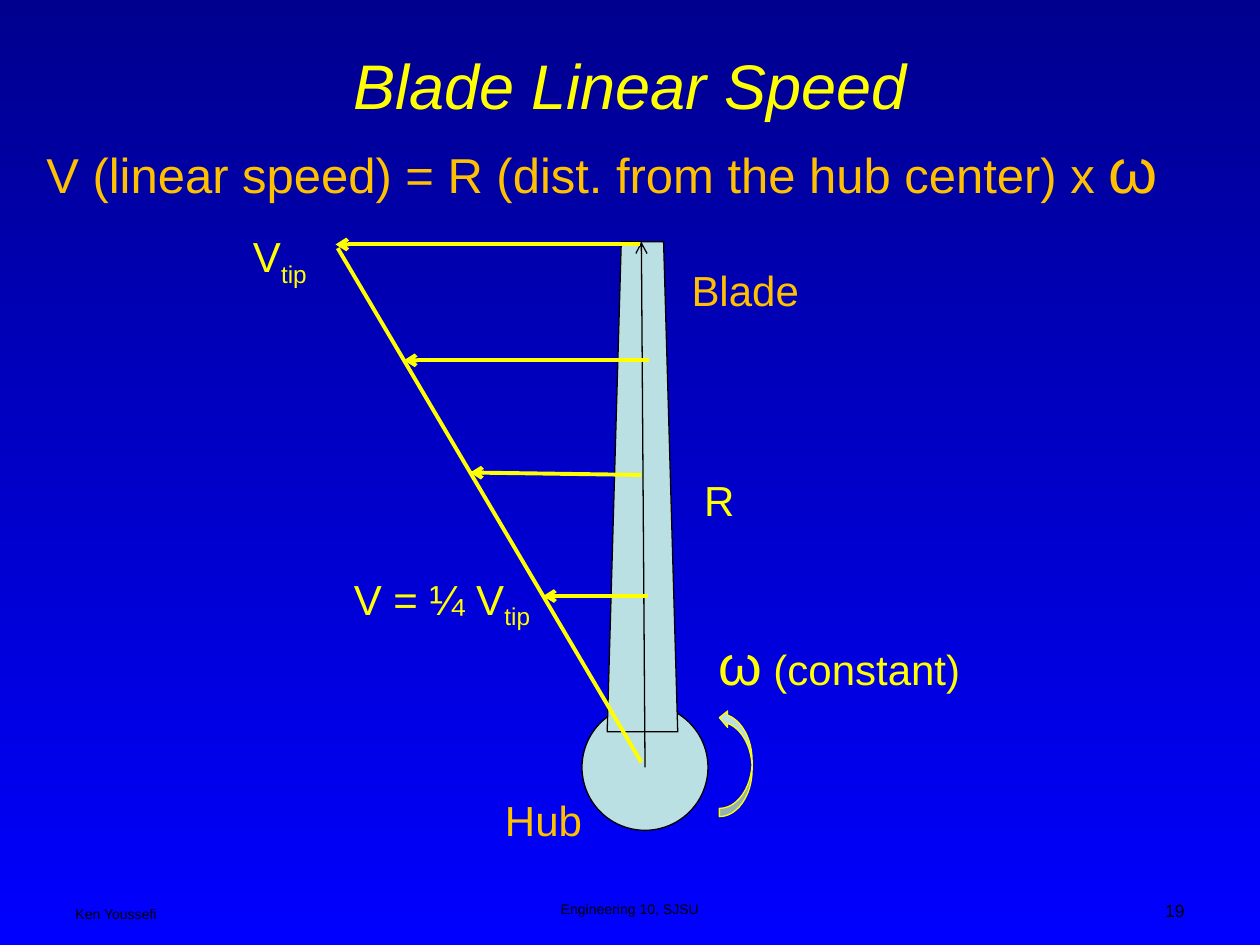
import pptx
import pptx.util
import pptx.dml.color
import pptx.enum.shapes
import pptx.enum.text
import pptx.oxml.ns
from lxml import etree

Pt = pptx.util.Pt
PRESET = pptx.enum.shapes.MSO_SHAPE
ALIGN = pptx.enum.text.PP_ALIGN
FIT = pptx.enum.text.MSO_AUTO_SIZE
qn = pptx.oxml.ns.qn

COLORS = {
    "sky top": "00008F",
    "sky bottom": "0000FF",
    "yellow": "FFFF00",
    "orange": "FFC000",
    "metal": "BBE0E3",
    "black": "000000",
}


def color(name):
    return pptx.dml.color.RGBColor.from_string(COLORS[name])


def style_font(font, size, color_name):
    font.name = "Arial"
    font.size = Pt(size)
    font.color.rgb = color(color_name)


def add_label(shapes, box, runs, size, color_name, wrap=True, align=None, fit=FIT.SHAPE_TO_FIT_TEXT):
    """Add a one-paragraph label; each run is (text, own size or None, is subscript)."""
    label = shapes.add_textbox(*map(Pt, box))
    frame = label.text_frame
    frame.word_wrap = wrap
    frame.auto_size = fit
    paragraph = frame.paragraphs[0]
    paragraph.alignment = align
    style_font(paragraph.font, size, color_name)
    for text, own_size, subscript in runs:
        run = paragraph.add_run()
        run.text = text
        if own_size:
            run.font.size = Pt(own_size)
        if subscript:
            run._r.get_or_add_rPr().set("baseline", "-25000")


def add_part(shapes, preset, box, outline):
    part = shapes.add_shape(preset, *map(Pt, box))
    part.shadow.inherit = False
    part.fill.solid()
    part.fill.fore_color.rgb = color("metal")
    part.line.color.rgb = color(outline)
    part.line.width = Pt(0.75)
    return part


def add_line(shapes, start, end, color_name, width, arrow=True):
    line = shapes.add_connector(
        pptx.enum.shapes.MSO_CONNECTOR.STRAIGHT, *map(Pt, (*start, *end)))
    line.line.color.rgb = color(color_name)
    line.line.width = Pt(width)
    if arrow:
        etree.SubElement(line.line._get_or_add_ln(), qn("a:tailEnd"), type="arrow")
    etree.SubElement(line._element.spPr, qn("a:effectLst"))


def paint_background(slide):
    fill = slide.background.fill
    fill.gradient()
    fill.gradient_angle = 270
    for stop, name in zip(fill.gradient_stops, ("sky top", "sky bottom")):
        stop.color.rgb = color(name)


def build_header(slide, left, top, width):
    # Title
    title = slide.shapes.title
    title.left, title.top, title.width, title.height = map(Pt, (left, top, width, 52.6))
    title.text_frame.text = "Blade Linear Speed"
    title.text_frame.auto_size = FIT.NONE
    title.text_frame.vertical_anchor = pptx.enum.text.MSO_ANCHOR.MIDDLE
    heading = title.text_frame.paragraphs[0]
    heading.alignment = ALIGN.CENTER
    style_font(heading.font, 36, "yellow")
    heading.font.italic = True

    # Speed formula
    add_label(slide.shapes, (left - 16.6, top + 49.7, 673.2, 51),
              [("V (linear speed) = R (dist. from the hub center) x ", None, False),
               ("ω", 36, False)], 28, "orange")


def build_diagram(slide, left, top):
    shapes = slide.shapes

    def at(x, y, *size):
        return (left + x, top + y, *size)

    # Hub, rotation and blade; the rotation label stays on one line above its arrow
    add_part(shapes, PRESET.OVAL, at(195.6, 274.5, 72, 72), "black")
    rotation = add_part(shapes, PRESET.CURVED_RIGHT_ARROW, at(274.1, 277.4, 18.7, 61.2), "yellow")
    rotation.rotation = 180
    for index, value in enumerate((0.25, 0.5, 0.25)):
        rotation.adjustments[index] = value
    add_label(shapes, at(266.2, 228.4, 156, 46),
              [("ω", 32, False), (" (constant)", None, False)], 24, "yellow", wrap=False)
    blade = add_part(shapes, PRESET.FLOWCHART_MANUAL_OPERATION, at(210, 10.2, 40.3, 280), "black")
    blade._element.spPr.get_or_add_xfrm().set("flipV", "1")

    # Radius, measured from the hub center
    add_label(shapes, at(258.3, 139.8, 32.4, 36.7), [("R", None, False)], 24, "yellow", wrap=False)
    add_line(shapes, at(231.6, 310.5), at(229.5, 10.2), "black", 0.75)

    # Linear speed profile
    center_x, center_y = 229.5, 307.6
    tip_x, tip_y = 56, 13.8
    add_line(shapes, at(center_x, center_y), at(tip_x, tip_y), "yellow", 2.25, arrow=False)
    add_label(shapes, at(0.5, 0.2, 47.5, 36),
              [("V", None, False), ("tip", None, True)], 24, "yellow", wrap=False)

    # Speed arrows, each reaching the profile
    def add_speed(target, start_x, start_y, end_y):
        end_x = center_x + (tip_x - center_x) * (center_y - end_y) / (center_y - tip_y)
        add_line(target, at(start_x, start_y), at(end_x, end_y), "yellow", 2.25)

    for speed in ((233.8, 77.9, 77.9), (229.5, 143.4, 142), (228.8, 11.7, 11.7)):
        add_speed(shapes, *speed)
    quarter_speed = shapes.add_group_shape().shapes
    add_speed(quarter_speed, 233.1, 212.6, 212.6)
    add_label(quarter_speed, at(58.1, 196, 118.1, 36.7),
              [("V = ¼ V", None, False), ("tip", None, True)], 24, "yellow", wrap=False)

    # Part names
    for name, x, y in (("Blade", 251.1, 19.6), ("Hub", 144.5, 322.7)):
        add_label(shapes, at(x, y, 84.2, 36.7), [(name, None, False)], 24, "orange")


def build_footer(slide, left, top):
    for text, x, y, width, height, size, align in (
        ("Ken Youssefi", 0, 3.6, 168, 15, 8, ALIGN.LEFT),
        ("Engineering 10, SJSU", 210, 0.7, 228, 18, 8, ALIGN.CENTER),
        ("19", 480, 0, 168, 19, 10, ALIGN.RIGHT),
    ):
        add_label(slide.shapes, (left + x, top + y, width, height),
                  [(text, None, False)], size, "black", align=align, fit=FIT.NONE)


def main():
    presentation = pptx.Presentation()
    presentation.slide_width, presentation.slide_height = Pt(720), Pt(540)
    slide = presentation.slides.add_slide(presentation.slide_layouts[5])
    paint_background(slide)
    build_header(slide, 36, 21.6, 648)
    build_footer(slide, 36, 510.5)
    build_diagram(slide, 137, 128)
    presentation.save("out.pptx")


if __name__ == "__main__":
    main()
